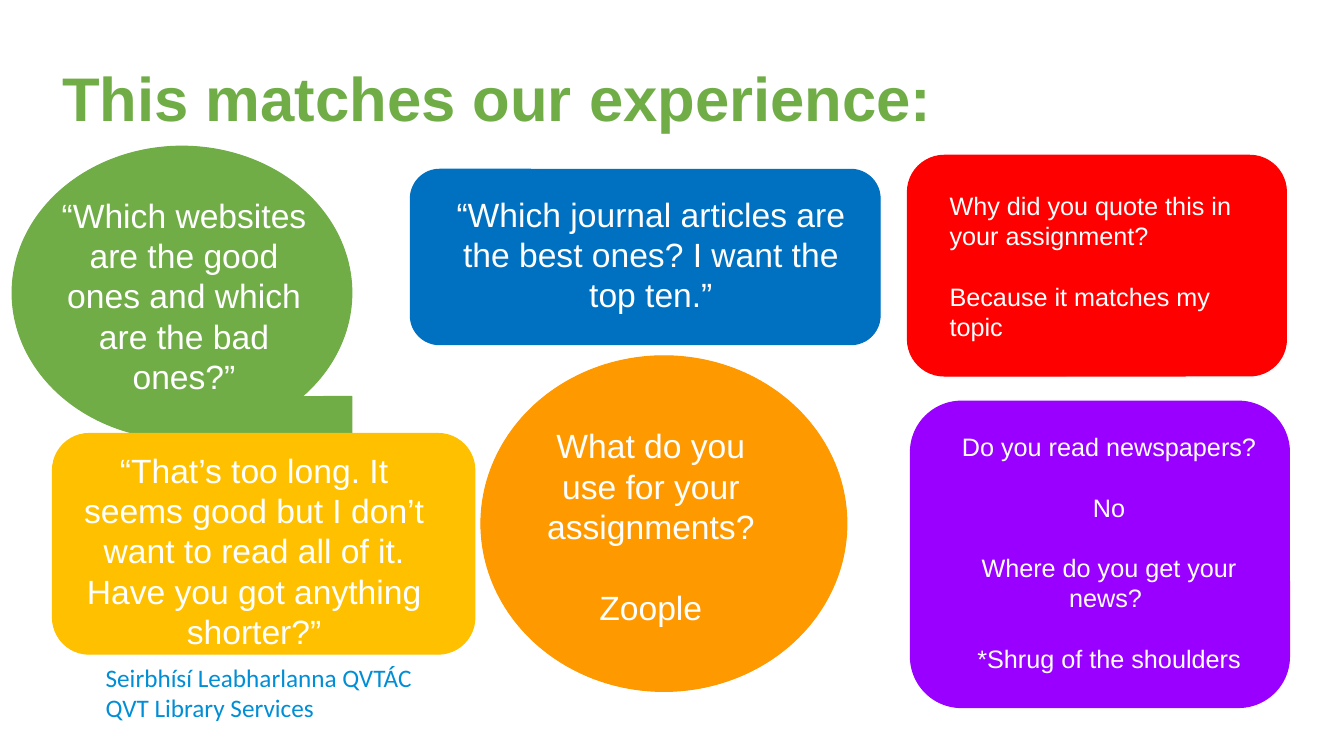
from dataclasses import dataclass

import pptx
import pptx.dml.color
import pptx.enum.shapes
import pptx.enum.text
import pptx.util

RGBColor = pptx.dml.color.RGBColor
Kind = pptx.enum.shapes.MSO_SHAPE
Align = pptx.enum.text.PP_ALIGN
Anchor = pptx.enum.text.MSO_ANCHOR

EMU_PER_PX = 9144  # 100 px to the inch

WHITE = RGBColor(0xFF, 0xFF, 0xFF)
GREEN = RGBColor(0x70, 0xAD, 0x47)
BLUE = RGBColor(0x00, 0x70, 0xC0)
YELLOW = RGBColor(0xFF, 0xC0, 0x00)
ORANGE = RGBColor(0xFF, 0x99, 0x00)
RED = RGBColor(0xFF, 0x00, 0x00)
PURPLE = RGBColor(0x99, 0x00, 0xFF)
SKY = RGBColor(0x00, 0x8E, 0xD6)

Box = tuple[int, int, int, int]


@dataclass
class Label:
    box: Box
    lines: list[str]
    size: int
    color: RGBColor = WHITE
    font: str = "Arial"
    align: Align = Align.CENTER
    anchor: Anchor = Anchor.TOP
    bold: bool = False
    pad: int = 10
    gap: float = 0
    pitch: float = 1.0


@dataclass
class Bubble:
    kind: Kind
    box: Box
    color: RGBColor
    label: Label


FOOTER = Label((95, 652, 457, 71),
               ["Seirbhísí Leabharlanna QVTÁC", "QVT Library Services"],
               18, SKY, "Calibri", Align.LEFT, pad=5)
TITLE = Label((52, 28, 1150, 145), ["This matches our experience:"], 44, GREEN,
              align=Align.LEFT, anchor=Anchor.MIDDLE, bold=True, pitch=0.9)

BUBBLES = [
    Bubble(Kind.FLOWCHART_SEQUENTIAL_ACCESS_STORAGE, (12, 145, 337, 291), GREEN,
           Label((49, 183, 267, 199),
                 ["“Which websites are the good ones and which are the bad ones?”"], 24)),
    Bubble(Kind.ROUNDED_RECTANGLE, (407, 168, 466, 174), BLUE,
           Label((441, 182, 409, 145),
                 ["“Which journal articles are the best ones? I want the top ten.”"], 24)),
    Bubble(Kind.ROUNDED_RECTANGLE, (52, 430, 419, 219), YELLOW,
           Label((59, 436, 386, 183),
                 ["“That’s too long. It seems good but I don’t want to read all of it. "
                  "Have you got anything shorter?”"], 24)),
    Bubble(Kind.OVAL, (477, 353, 363, 333), ORANGE,
           Label((525, 412, 241, 208),
                 ["What do you use for your assignments?", "Zoople"], 24, gap=28.8)),
    Bubble(Kind.ROUNDED_RECTANGLE, (900, 154, 376, 219), RED,
           Label((932, 179, 313, 145),
                 ["Why did you quote this in your assignment?",
                  "Because it matches my topic"], 18, align=Align.LEFT, gap=21.6)),
    Bubble(Kind.ROUNDED_RECTANGLE, (903, 398, 376, 304), PURPLE,
           Label((940, 418, 320, 174),
                 ["Do you read newspapers?", "No", "Where do you get your news? ",
                  "*Shrug of the shoulders"], 18, gap=21.6)),
]


def scale(box: Box) -> list[pptx.util.Emu]:
    return [pptx.util.Emu(px * EMU_PER_PX) for px in box]


def add_label(slide: pptx.slide.Slide, label: Label) -> None:
    frame = slide.shapes.add_textbox(*scale(label.box)).text_frame
    frame.word_wrap = True
    frame.vertical_anchor = label.anchor
    frame.margin_left = frame.margin_right = pptx.util.Emu(10 * EMU_PER_PX)
    frame.margin_top = frame.margin_bottom = pptx.util.Emu(label.pad * EMU_PER_PX)
    for i, line in enumerate(label.lines):
        para = frame.add_paragraph() if i else frame.paragraphs[0]
        para.alignment = label.align
        para.line_spacing = label.pitch
        para.space_before = pptx.util.Pt(label.gap if i else 0)
        run = para.add_run()
        run.text = line
        run.font.name = label.font
        run.font.size = pptx.util.Pt(label.size)
        run.font.bold = label.bold
        run.font.color.rgb = label.color


def add_bubble(slide: pptx.slide.Slide, bubble: Bubble) -> None:
    shape = slide.shapes.add_shape(bubble.kind, *scale(bubble.box))
    shape.shadow.inherit = False
    shape.fill.solid()
    shape.fill.fore_color.rgb = bubble.color
    shape.line.color.rgb = bubble.color
    shape.line.width = pptx.util.Pt(0.75)
    add_label(slide, bubble.label)


def main() -> None:
    deck = pptx.Presentation()
    deck.slide_width, deck.slide_height = scale((1333, 750, 0, 0))[:2]
    slide = deck.slides.add_slide(deck.slide_layouts[6])
    add_label(slide, FOOTER)
    add_label(slide, TITLE)
    for bubble in BUBBLES:
        add_bubble(slide, bubble)
    deck.save("out.pptx")


if __name__ == "__main__":
    main()
